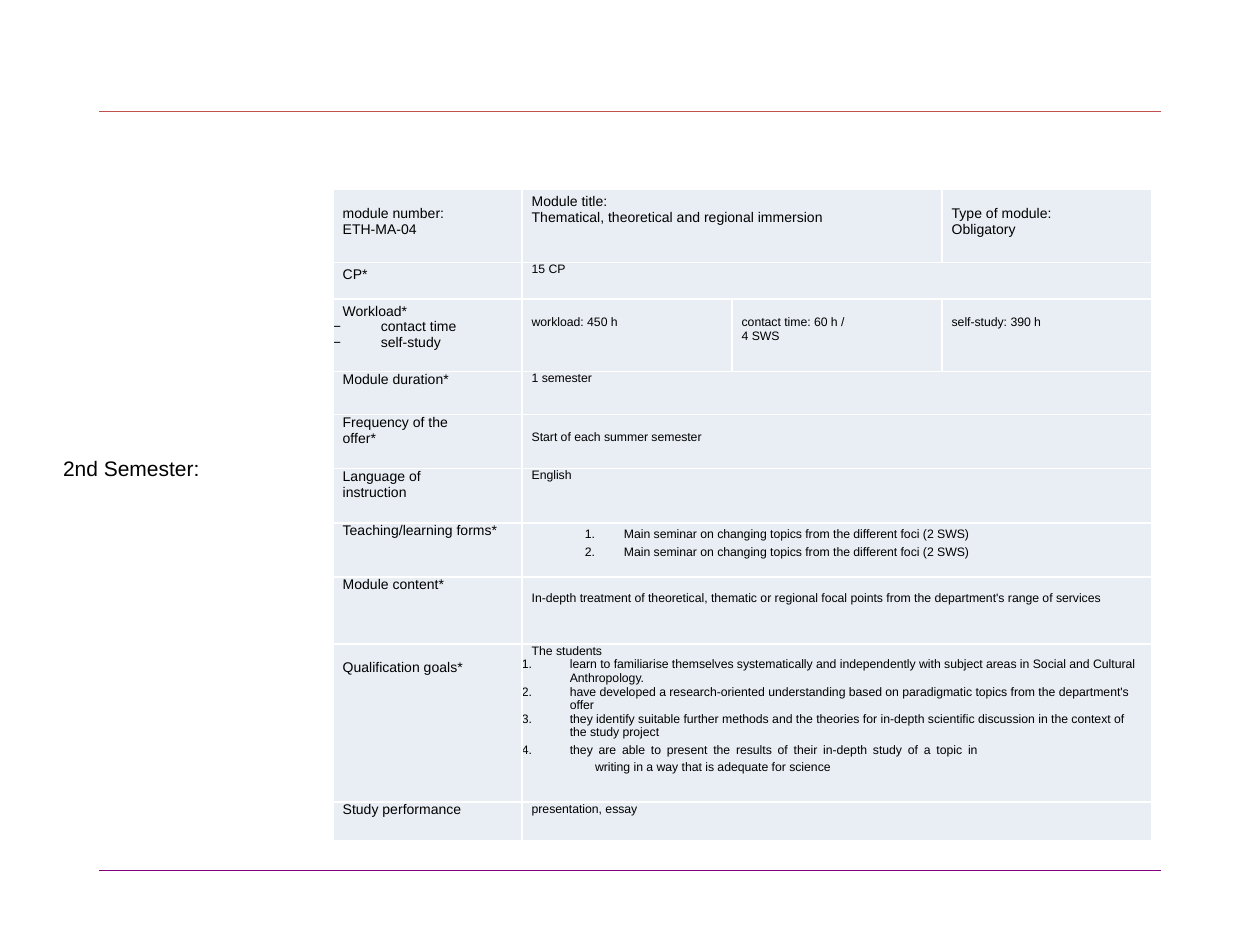
from lxml import etree
from pptx import Presentation
from pptx.dml.color import RGBColor
from pptx.enum import shapes, text
from pptx.oxml.ns import qn
from pptx.util import Pt

FONT = "Arial"
LABEL, VALUE = 8, 7
INDENT = 5.6
DASH = {"left": 27.4, "hanging": 27.4, "bullet": "−"}
NUMBER = {"left": 27.4, "hanging": 27.4, "bullet": "number"}
SEMINAR = {"left": 58.3, "hanging": 22.3, "bullet": "number", "line_spacing": 10.3}
SEMINAR_TEXT = "Main seminar on changing topics from the different foci (2 SWS)"

COLUMN_WIDTHS = [108, 120, 120, 120]
ROW_HEIGHTS = [41.8, 20.9, 41.4, 24.5, 31, 31, 31, 38.2, 90.4, 22.3]


def color(hex_string):
    return RGBColor.from_string(hex_string)


def label(*lines, top=0, right=0, **form):
    return {"size": LABEL, "lines": lines, "top": top, "right": right, "form": form}


def value(*lines, top=0, right=0, **form):
    return {"size": VALUE, "lines": lines, "top": top, "right": right, "form": form}


# Each row lists its cells as (first column, columns covered, content).
ROWS = [
    [(0, 1, label("module number:", "ETH-MA-04", top=9.2)),
     (1, 2, label(("Module title:", {"line_spacing": 11.4}),
                  "Thematical, theoretical and regional immersion")),
     (3, 1, label("Type of module:", "Obligatory", top=9.2))],
    [(0, 1, label("CP*", line_spacing=11.4)), (1, 3, value("15 CP"))],
    [(0, 1, label(("Workload*", {"line_spacing": 11.4}),
                  ("contact time", DASH), ("self-study", DASH))),
     (1, 1, value("workload: 450 h", top=9.2)),
     (2, 1, value("contact time: 60 h / 4 SWS", top=9.2, right=53)),
     (3, 1, value("self-study: 390 h", top=9.2))],
    [(0, 1, label("Module duration*")), (1, 3, value("1 semester"))],
    [(0, 1, label("Frequency of the offer*", right=31)),
     (1, 3, value("Start of each summer semester", top=9.2))],
    [(0, 1, label("Language of instruction", right=31)), (1, 3, value("English"))],
    [(0, 1, label("Teaching/learning forms*")),
     (1, 3, value((SEMINAR_TEXT, SEMINAR), (SEMINAR_TEXT, SEMINAR)))],
    [(0, 1, label("Module content*")),
     (1, 3, value("In-depth treatment of theoretical, thematic or regional focal points "
                  "from the department's range of services", top=8))],
    [(0, 1, label("Qualification goals*", top=9.2)),
     (1, 3, value(
         "The students",
         ("learn to familiarise themselves systematically and independently with subject "
          "areas in Social and Cultural Anthropology.", NUMBER),
         ("have developed a research-oriented understanding based on paradigmatic topics "
          "from the department's offer", NUMBER),
         ("they identify suitable further methods and the theories for in-depth scientific "
          "discussion in the context of the study project", NUMBER),
         ("they are able to present the results of their in-depth study of a topic in",
          {**NUMBER, "line_spacing": 10.3, "word_gap": 1.4}),
         ("writing in a way that is adequate for science",
          {"left": 41.8, "line_spacing": 9.3}),
         right=7))],
    [(0, 1, label("Study performance")), (1, 3, value("presentation, essay"))],
]


def set_font(item, size):
    for name, setting in {"name": FONT, "size": Pt(size)}.items():
        setattr(item.font, name, setting)
    item.font.color.rgb = color("000000")


def set_margins(box, left=0, top=0, right=0, bottom=0):
    margins = {"left": left, "top": top, "right": right, "bottom": bottom}
    for side, length in margins.items():
        setattr(box, f"margin_{side}", Pt(length))


def add_words(paragraph, words, size, word_gap):
    """Add the words, with word_gap points of extra width at each space."""
    pieces = words.replace(" ", "\n \n").split("\n") if word_gap else [words]
    for piece in pieces:
        run = paragraph.add_run()
        run.text = piece
        set_font(run, size)
        if piece == " ":
            run.font._element.set("spc", str(round(word_gap * 100)))


def fill_paragraph(paragraph, words, size, left=INDENT, hanging=0, bullet=None,
                   line_spacing=None, word_gap=0):
    properties = paragraph._p.get_or_add_pPr()
    properties.set("marL", str(Pt(left)))
    properties.set("indent", str(-Pt(hanging)))
    if bullet == "number":
        etree.SubElement(properties, qn("a:buFont"), typeface=FONT)
        etree.SubElement(properties, qn("a:buAutoNum"), type="arabicPeriod")
    elif bullet:
        etree.SubElement(properties, qn("a:buFont"), typeface=FONT)
        etree.SubElement(properties, qn("a:buChar"), char=bullet)
    if line_spacing:
        paragraph.line_spacing = Pt(line_spacing)
    add_words(paragraph, words, size, word_gap)


def set_borders(cell, hex_string, width):
    properties = cell._tc.get_or_add_tcPr()
    for position, side in enumerate(("lnL", "lnR", "lnT", "lnB")):
        border = etree.Element(qn(f"a:{side}"), w=str(Pt(width)))
        fill = etree.SubElement(border, qn("a:solidFill"))
        etree.SubElement(fill, qn("a:srgbClr"), val=hex_string)
        properties.insert(position, border)


def fill_cell(cell, content):
    set_margins(cell, top=content["top"], right=content["right"])
    frame = cell.text_frame
    for index, line in enumerate(content["lines"]):
        words, form = (line, content["form"]) if isinstance(line, str) else line
        paragraph = frame.add_paragraph() if index else frame.paragraphs[0]
        fill_paragraph(paragraph, words, content["size"], **form)


def add_module_table(slide):
    frame = slide.shapes.add_table(
        len(ROW_HEIGHTS), len(COLUMN_WIDTHS), Pt(190.2), Pt(108.3),
        Pt(sum(COLUMN_WIDTHS)), Pt(sum(ROW_HEIGHTS)))
    table = frame.table
    for column, width in zip(table.columns, COLUMN_WIDTHS):
        column.width = Pt(width)
    for row, height in zip(table.rows, ROW_HEIGHTS):
        row.height = Pt(height)
    for cell in table.iter_cells():
        set_margins(cell)
        cell.fill.solid()
        cell.fill.fore_color.rgb = color("E9EDF4")
        set_borders(cell, "FFFFFF", 1)
    for row, cells in enumerate(ROWS):
        for column, span, content in cells:
            cell = table.cell(row, column)
            if span > 1:
                cell.merge(table.cell(row, column + span - 1))
            fill_cell(cell, content)


def add_rule(slide, y, hex_string):
    rule = slide.shapes.add_connector(
        shapes.MSO_CONNECTOR.STRAIGHT, Pt(56.7), Pt(y), Pt(663.3), Pt(y))
    rule.line.color.rgb = color(hex_string)
    rule.line.width = Pt(0.75)
    etree.SubElement(rule._element.spPr, qn("a:effectLst"))


def add_heading(slide, words):
    box = slide.shapes.add_textbox(Pt(36), Pt(144), Pt(106.6), Pt(249))
    frame = box.text_frame
    frame.word_wrap = True
    frame.vertical_anchor = text.MSO_ANCHOR.MIDDLE
    set_margins(frame)
    paragraph = frame.paragraphs[0]
    paragraph.line_spacing = 0.9
    add_words(paragraph, words, 12, 0)


def main():
    presentation = Presentation()
    presentation.slide_width, presentation.slide_height = Pt(720), Pt(540)
    slide = presentation.slides.add_slide(presentation.slide_layouts[6])
    add_rule(slide, 63.7, "C0504D")
    add_rule(slide, 497.3, "800080")
    add_heading(slide, "2nd Semester:")
    add_module_table(slide)
    presentation.save("out.pptx")


if __name__ == "__main__":
    main()
